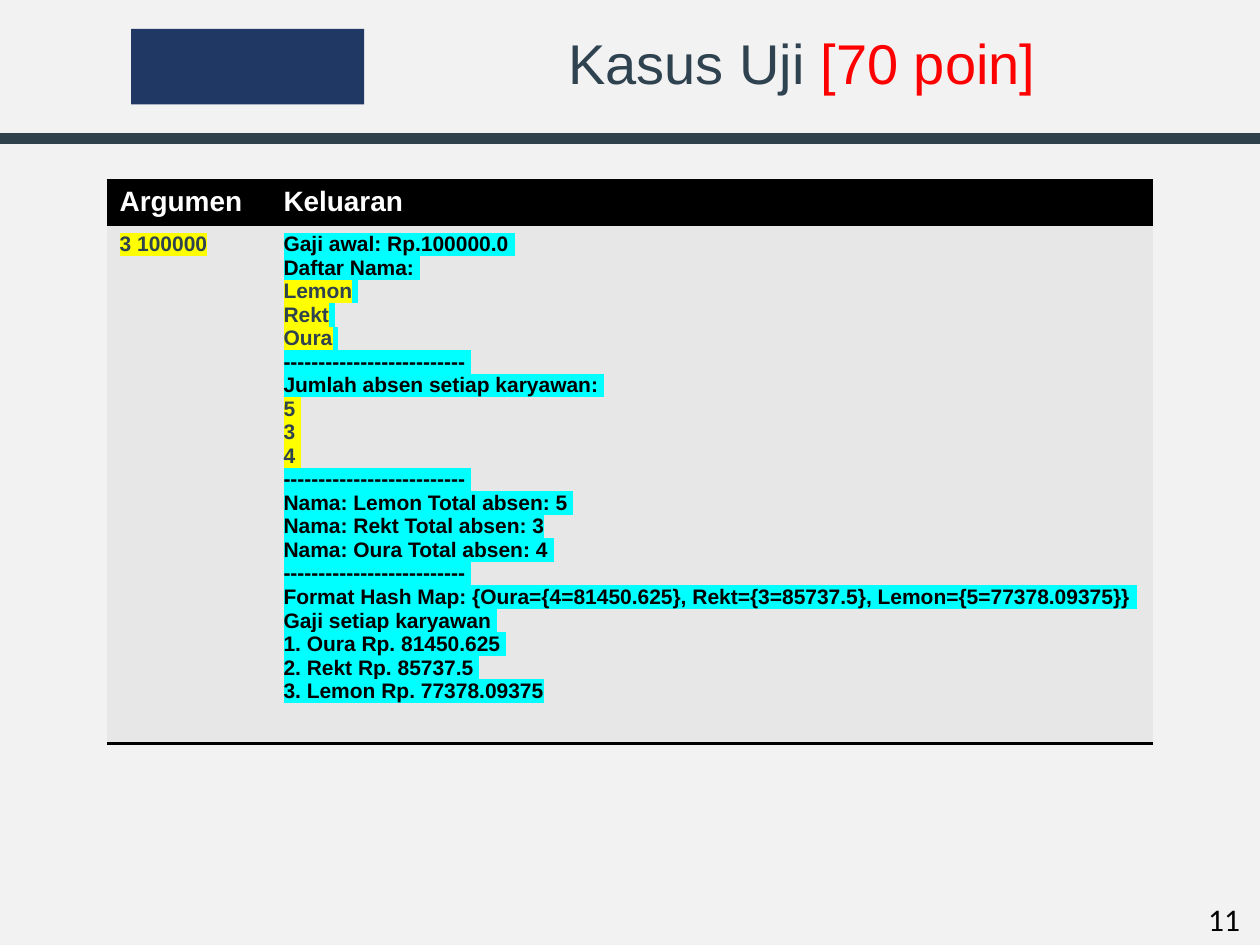
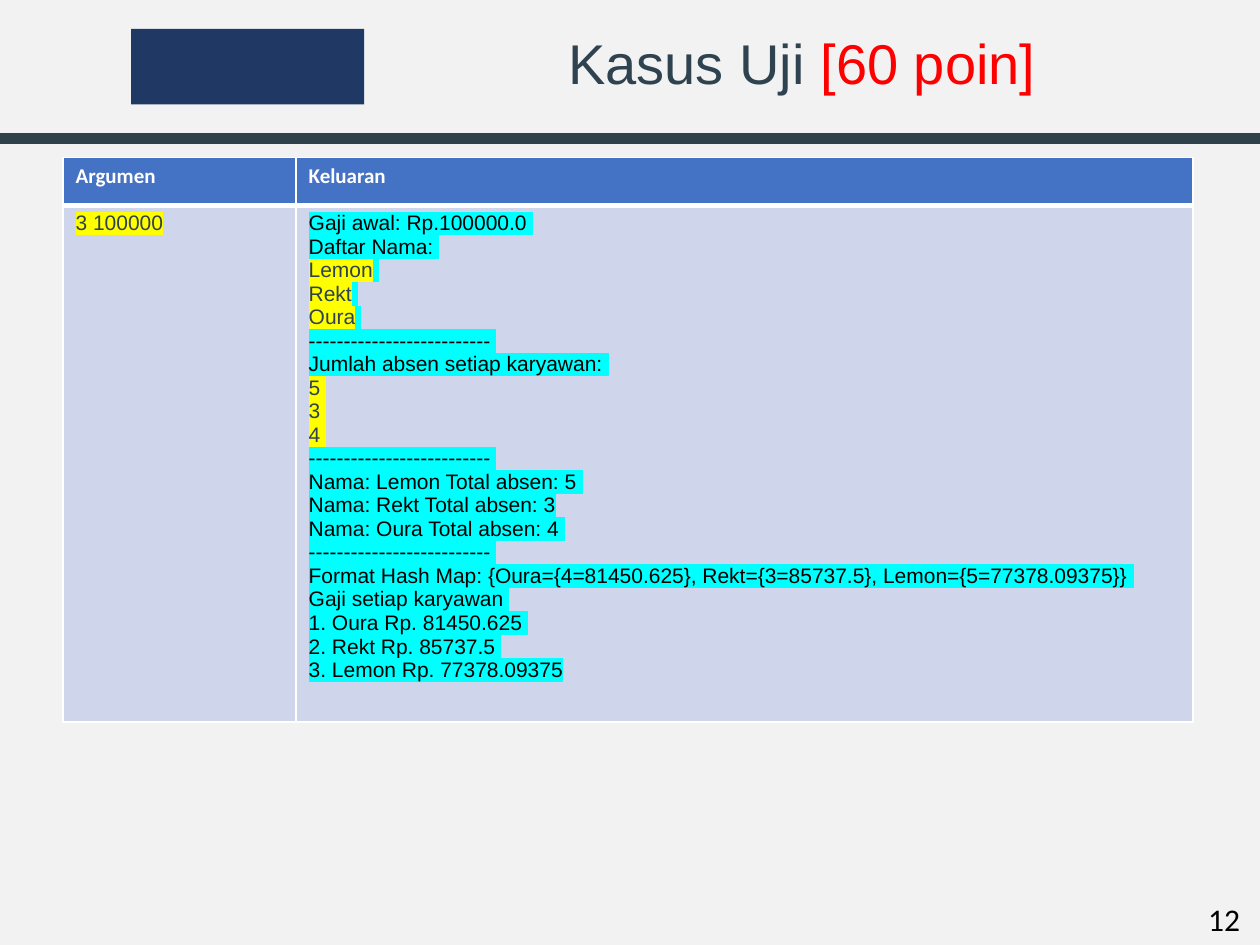
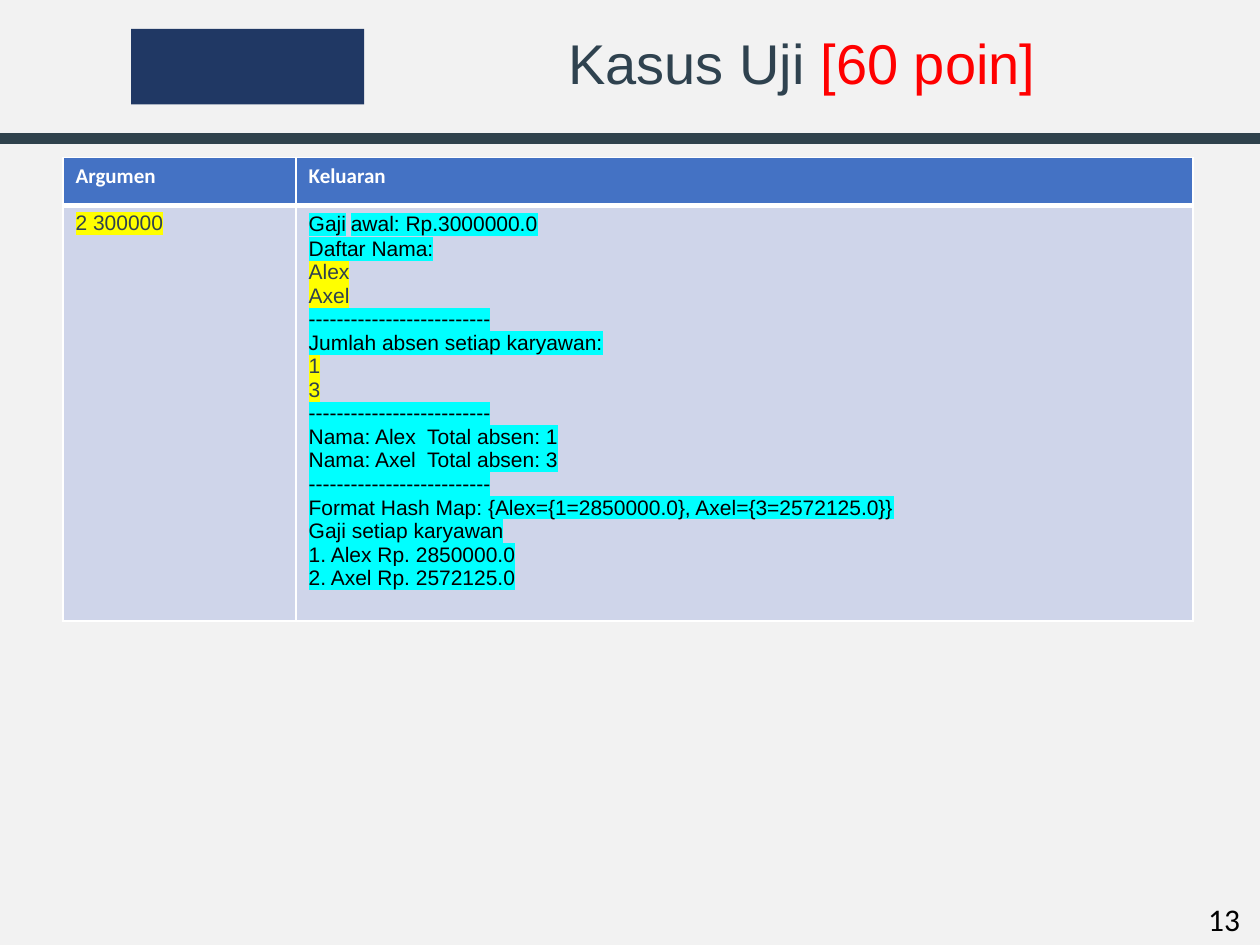
"""Build three test-case slides with an argument and output table each."""
from lxml.etree import SubElement
from pptx import Presentation
from pptx.dml.color import RGBColor
from pptx.enum.shapes import MSO_CONNECTOR, MSO_SHAPE
from pptx.enum.text import MSO_ANCHOR, PP_ALIGN
from pptx.oxml.ns import qn
from pptx.util import Inches, Pt

PAGE_COLOR = RGBColor(0xF2, 0xF2, 0xF2)
BAND = RGBColor(0x2F, 0x42, 0x4C)
SLATE = RGBColor(0x2F, 0x42, 0x4F)
NAVY = RGBColor(0x20, 0x38, 0x64)
RED = RGBColor(0xFF, 0, 0)
BLACK = RGBColor(0, 0, 0)
WHITE = RGBColor(0xFF, 0xFF, 0xFF)
YELLOW = RGBColor(0xFF, 0xFF, 0)
CYAN = RGBColor(0, 0xFF, 0xFF)
GRAY = RGBColor(0xE7, 0xE7, 0xE7)
BLUE = RGBColor(0x44, 0x72, 0xC4)
PALE_BLUE = RGBColor(0xCF, 0xD5, 0xEA)

LINE_HEIGHT = 0.2
TABLE_BASE = 0.48
FIRST_NUMBER = 11
HEADINGS = ("Argumen", "Keluaran")
RULE = "-" * 26


def printed(text):
    return [(text, CYAN)]


def typed(text, tail=""):
    return [(text, YELLOW)] + ([(tail, CYAN)] if tail else [])


THREE_STAFF = [
    printed("Gaji awal: Rp.100000.0 "),
    printed("Daftar Nama: "),
    typed("Lemon", " "),
    typed("Rekt", " "),
    typed("Oura", " "),
    printed(RULE + " "),
    printed("Jumlah absen setiap karyawan: "),
    typed("5 "),
    typed("3 "),
    typed("4 "),
    printed(RULE + " "),
    printed("Nama: Lemon Total absen: 5 "),
    printed("Nama: Rekt Total absen: 3"),
    printed("Nama: Oura Total absen: 4 "),
    printed(RULE + " "),
    printed("Format Hash Map: {Oura={4=81450.625}, Rekt={3=85737.5}, Lemon={5=77378.09375}} "),
    printed("Gaji setiap karyawan "),
    printed("1. Oura Rp. 81450.625 "),
    printed("2. Rekt Rp. 85737.5 "),
    printed("3. Lemon Rp. 77378.09375"),
]
TWO_STAFF = [
    [("Gaji", CYAN), (" ", None), ("awal: Rp.3000000.0", CYAN)],
    printed("Daftar Nama:"),
    typed("Alex"),
    typed("Axel"),
    printed(RULE),
    printed("Jumlah absen setiap karyawan:"),
    typed("1"),
    typed("3"),
    printed(RULE),
    printed("Nama: Alex  Total absen: 1"),
    printed("Nama: Axel  Total absen: 3"),
    printed(RULE),
    printed("Format Hash Map: {Alex={1=2850000.0}, Axel={3=2572125.0}}"),
    printed("Gaji setiap karyawan"),
    printed("1. Alex Rp. 2850000.0"),
    printed("2. Axel Rp. 2572125.0"),
]

DARK_STYLE = {
    "at": (0.85, 1.43), "columns": (1.3, 7), "rows": (0.36, 0.39),
    "fills": (BLACK, GRAY), "header_font": ("Arial", 16), "bold": True,
    "line": BLACK, "borders": ({"T": 2}, {"B": 2}),
}
BLUE_STYLE = {
    "at": (0.5, 1.25), "columns": (1.85, 7.12), "rows": (0.38, 2.1),
    "fills": (BLUE, PALE_BLUE), "header_font": ("Calibri", 12), "bold": False,
    "line": WHITE,
    "borders": ({"L": 1, "R": 1, "T": 1, "B": 3}, {"L": 1, "R": 1, "T": 3, "B": 1}),
}
CASES = [
    ("[70 poin]", "3 100000", THREE_STAFF, DARK_STYLE),
    ("[60 poin]", "3 100000", THREE_STAFF, BLUE_STYLE),
    ("[60 poin]", "2 300000", TWO_STAFF, BLUE_STYLE),
]


def add_span(para, text, name, size, color, bold=False, highlight=None):
    span = para.add_run()
    span.text = text
    span.font.size, span.font.bold = Pt(size), bold
    span.font.color.rgb = color
    if highlight is not None:
        mark = SubElement(span.font._element, qn("a:highlight"))
        SubElement(mark, qn("a:srgbClr"), val=str(highlight))
    span.font.name = name


def add_frame(page, number, width):
    box = page.shapes.add_textbox(*map(Inches, (9.49, 7.09, 0.5, 0.4)))
    box.text_frame.word_wrap = False
    add_span(box.text_frame.paragraphs[0], str(number), "Calibri", 18, BLACK)
    emblem = page.shapes.add_shape(MSO_SHAPE.RECTANGLE, *map(Inches, (1.04, 0.23, 1.85, 0.6)))
    emblem.shadow.inherit = False
    emblem.fill.solid()
    emblem.fill.fore_color.rgb = NAVY
    emblem.line.fill.background()
    band = page.shapes.add_connector(MSO_CONNECTOR.STRAIGHT, 0, Inches(1.1), width, Inches(1.1))
    band.line.color.rgb = BAND
    band.line.width = Pt(6)
    SubElement(band._element.spPr, qn("a:effectLst"))


def set_title(page, points):
    title = page.shapes.title
    title.left, title.top, title.width, title.height = map(Inches, (3.24, 0.23, 6.25, 0.6))
    title.text_frame.vertical_anchor = MSO_ANCHOR.MIDDLE
    para = title.text_frame.paragraphs[0]
    para.alignment, para.line_spacing = PP_ALIGN.CENTER, 0.9
    add_span(para, "Kasus Uji ", "Arial", 32, SLATE)
    add_span(para, points, "Arial", 32, RED)


def style_cell(cell, fill, line, borders):
    properties = cell._tc.get_or_add_tcPr()
    for side in "LRTB":
        width = borders.get(side, 0)
        edge = SubElement(properties, qn(f"a:ln{side}"), w=str(Pt(width)))
        if width:
            SubElement(SubElement(edge, qn("a:solidFill")), qn("a:srgbClr"), val=str(line))
        else:
            SubElement(edge, qn("a:noFill"))
    cell.fill.solid()
    cell.fill.fore_color.rgb = fill


def write_lines(cell, lines, bold):
    frame = cell.text_frame
    for index, line in enumerate(lines):
        para = frame.add_paragraph() if index else frame.paragraphs[0]
        for text, highlight in line:
            color = SLATE if highlight == YELLOW else BLACK
            name = "Arial" if highlight else "Calibri"
            add_span(para, text, name, 12, color, bold, highlight)


def add_case_table(page, argument, output, style):
    height = TABLE_BASE + len(output) * LINE_HEIGHT
    size = (sum(style["columns"]), height)
    holder = page.shapes.add_table(2, 2, *map(Inches, style["at"] + size))
    table = holder.table
    for column, width in zip(table.columns, style["columns"]):
        column.width = Inches(width)
    for row, row_height, fill, borders in zip(
            table.rows, style["rows"], style["fills"], style["borders"]):
        row.height = Inches(row_height)
        for cell in row.cells:
            style_cell(cell, fill, style["line"], borders)
    holder.height = Inches(height)
    for cell, heading in zip(table.rows[0].cells, HEADINGS):
        add_span(cell.text_frame.paragraphs[0], heading, *style["header_font"], WHITE, True)
    for cell, lines in zip(table.rows[1].cells, ([typed(argument)], output)):
        write_lines(cell, lines, style["bold"])


def main():
    deck = Presentation()
    deck.slide_width, deck.slide_height = Inches(10), Inches(7.5)
    background = deck.slide_master.background.fill
    background.solid()
    background.fore_color.rgb = PAGE_COLOR
    for number, (points, argument, output, style) in enumerate(CASES, FIRST_NUMBER):
        page = deck.slides.add_slide(deck.slide_layouts.get_by_name("Title Only"))
        add_frame(page, number, deck.slide_width)
        set_title(page, points)
        add_case_table(page, argument, output, style)
    deck.save("out.pptx")


if __name__ == "__main__":
    main()
